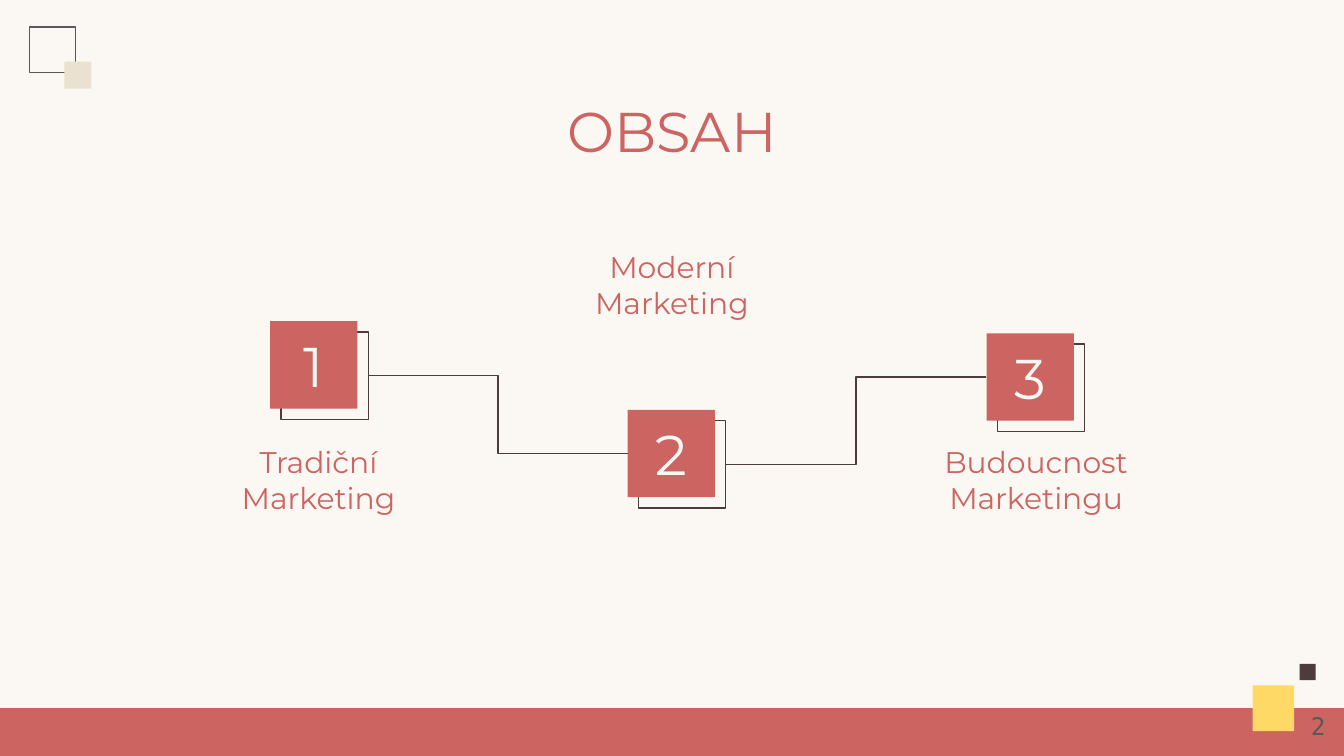
from lxml import etree
from pptx import Presentation
from pptx.dml.color import RGBColor
from pptx.enum import shapes, text
from pptx.oxml.ns import qn
from pptx.util import Inches, Pt

C = {"bg": "FBF8F4", "red": "CC6462", "dark": "4D3C3C", "grey": "595959",
     "yellow": "FFD966", "sand": "EBE1D0"}
FONT = "Montserrat"

TITLE = "OBSAH"
PAGE = "2"
# number, square left and top, label, label left and top
STEPS = [
    ("1", 2.01, 2.39, "Tradiční Marketing", 1.24, 3.2),
    ("2", 4.67, 3.05, "Moderní Marketing", 3.87, 1.75),
    ("3", 7.34, 2.48, "Budoucnost Marketingu", 6.58, 3.2),
]
SIDE, OFFSET = 0.65, 0.08
# left, top, width, height, fill, line
DECOR = [
    (0, 5.27, 10, 0.37, "red", None),
    (9.32, 5.1, 0.31, 0.34, "yellow", None),
    (9.67, 4.94, 0.12, 0.12, "dark", None),
    (0.22, 0.2, 0.34, 0.34, None, "grey"),
    (0.48, 0.46, 0.2, 0.2, "sand", None),
]


def rgb(name):
    return RGBColor.from_string(C[name])


def rect(x, y, w, h, fill=None, line=None):
    sp = s.shapes.add_shape(shapes.MSO_SHAPE.RECTANGLE,
                            Inches(x), Inches(y), Inches(w), Inches(h))
    sp.shadow.inherit = False
    if fill:
        sp.fill.solid()
        sp.fill.fore_color.rgb = rgb(fill)
    else:
        sp.fill.background()
    if line:
        sp.line.color.rgb = rgb(line)
        sp.line.width = Pt(0.75)
    else:
        sp.line.fill.background()
    return sp


def write(sp, words, size, color, font=FONT, align=text.PP_ALIGN.CENTER,
          anchor=text.MSO_ANCHOR.MIDDLE, side=0.1):
    tf = sp.text_frame
    tf.text = words
    tf.word_wrap = True
    tf.auto_size = text.MSO_AUTO_SIZE.NONE
    tf.vertical_anchor = anchor
    tf.margin_left = tf.margin_right = Inches(side)
    tf.margin_top = tf.margin_bottom = Inches(0.1)
    p = tf.paragraphs[0]
    p.alignment = align
    f = p.runs[0].font
    f.size, f.name, f.color.rgb = Pt(size), font, rgb(color)


def textbox(x, y, w, h):
    return s.shapes.add_textbox(Inches(x), Inches(y), Inches(w), Inches(h))


def elbow(start, start_site, end, end_site):
    cn = s.shapes.add_connector(shapes.MSO_CONNECTOR.ELBOW, 0, 0, 0, 0)
    cn.begin_connect(start, start_site)
    cn.end_connect(end, end_site)
    cn.line.color.rgb = rgb("dark")
    cn.line.width = Pt(0.75)
    etree.SubElement(cn._element.spPr, qn("a:effectLst"))


prs = Presentation()
prs.slide_width = Inches(10)
prs.slide_height = prs.slide_width * 9 // 16
s = prs.slides.add_slide(prs.slide_layouts[5])
s.background.fill.solid()
s.background.fill.fore_color.rgb = rgb("bg")

for part in DECOR:
    rect(*part)

title = s.shapes.title
title.left, title.top = Inches(0.7), Inches(0.65)
title.width, title.height = Inches(8.6), Inches(0.63)
write(title, TITLE, 30, "red")

frames, squares = [], []
for number, x, y, label, label_x, label_y in STEPS:
    frames.append(rect(x + OFFSET, y + OFFSET, SIDE, SIDE, line="dark"))
    squares.append(rect(x, y, SIDE, SIDE, fill="red"))
    write(squares[-1], number, 30, "bg")
    write(textbox(label_x, label_y, 2.26, 0.41), label, 16, "red",
          anchor=text.MSO_ANCHOR.TOP, side=0.15)

LEFT, RIGHT = 1, 3  # connection sites of a rectangle
elbow(frames[0], RIGHT, squares[1], LEFT)
elbow(squares[2], LEFT, frames[1], RIGHT)

write(textbox(9.36, 5.19, 0.6, 0.43), PAGE, 13, "grey", "DejaVu Sans Mono",
      text.PP_ALIGN.RIGHT, text.MSO_ANCHOR.TOP)

prs.save("out.pptx")
